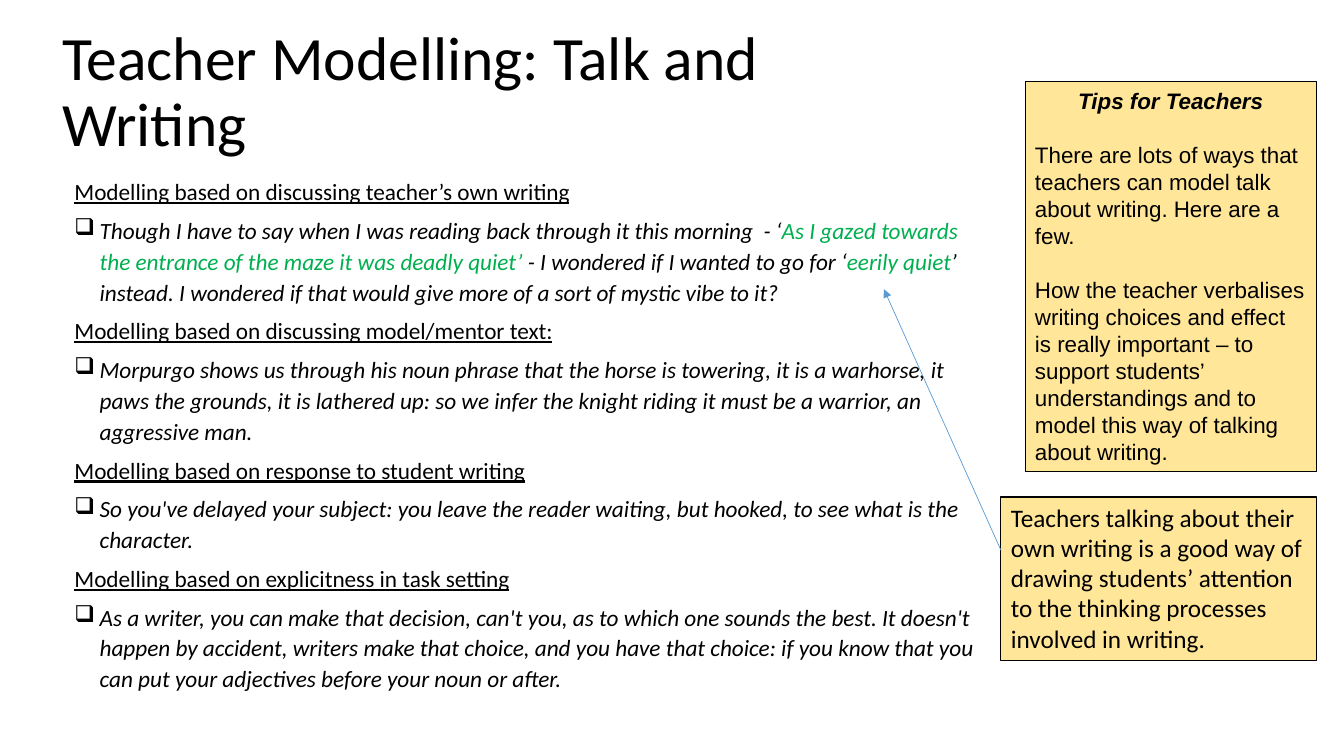
"""Build the slide on teacher modelling through talk and writing."""
from lxml import etree
from pptx import Presentation
from pptx.dml.color import RGBColor
from pptx.enum.shapes import MSO_CONNECTOR, MSO_SHAPE
from pptx.enum.text import MSO_ANCHOR, MSO_AUTO_SIZE, PP_ALIGN
from pptx.oxml.ns import qn
from pptx.util import Pt

BLACK = RGBColor(0x00, 0x00, 0x00)
GREEN = RGBColor(0x00, 0xB0, 0x50)
CREAM = RGBColor(0xFF, 0xE6, 0x99)
BLUE = RGBColor(0x5B, 0x9B, 0xD5)
LEFT, CENTER = PP_ALIGN.LEFT, PP_ALIGN.CENTER
TOP, MIDDLE = MSO_ANCHOR.TOP, MSO_ANCHOR.MIDDLE
GROW = MSO_AUTO_SIZE.SHAPE_TO_FIT_TEXT
RECT, STRAIGHT = MSO_SHAPE.RECTANGLE, MSO_CONNECTOR.STRAIGHT

TITLE = "Teacher Modelling: Talk and Writing"
MODELS = [
    ("Modelling based on discussing teacher’s own writing", [
        ("Though I have to say when I was reading back through it this morning  - ‘", BLACK),
        ("As I gazed towards the entrance of the maze it was deadly quiet’", GREEN),
        (" - I wondered if I wanted to go for ‘", BLACK),
        ("eerily quiet", GREEN),
        ("’ instead. I wondered if that would give more of a sort of mystic vibe to it?", BLACK)]),
    ("Modelling based on discussing model/mentor text:", [
        ("Morpurgo shows us through his noun phrase that the horse is towering, it is a "
         "warhorse, it paws the grounds, it is lathered up: so we infer the knight riding "
         "it must be a warrior, an aggressive man.", BLACK)]),
    ("Modelling based on response to student writing", [
        ("So you've delayed your subject: you leave the reader waiting, but hooked, to see "
         "what is the character.", BLACK)]),
    ("Modelling based on explicitness in task setting", [
        ("As a writer, you can make that decision, can't you, as to which one sounds the "
         "best. It doesn't happen by accident, writers make that choice, and you have that "
         "choice: if you know that you can put your adjectives before your noun or after.",
         BLACK)]),
]
TIPS = [
    "There are lots of ways that teachers can model talk about writing. Here are a few.",
    "How the teacher verbalises writing choices and effect is really important – to "
    "support students’ understandings and to model this way of talking about writing.",
]
NOTE = ("Teachers talking about their own writing is a good way of drawing students’ "
        "attention to the thinking processes involved in writing.")


def add_para(frame, runs, size, face="Calibri", bullet=None):
    """Add a paragraph of (text, colour) runs, filling the empty first one."""
    para = frame.paragraphs[0]
    if para.runs:
        para = frame.add_paragraph()
    para.alignment = LEFT
    if bullet:
        props = para._p.get_or_add_pPr()
        props.set("marL", str(Pt(18)))
        props.set("indent", str(Pt(-18)))
        etree.SubElement(props, qn("a:buChar")).set("char", bullet)
    para.font.size, para.font.name = Pt(size), face
    for text, color in runs:
        run = para.add_run()
        run.text = text
        run.font.color.rgb = color
    return para


def add_box(slide, left, top, width, height, anchor=TOP):
    """Add a wrapping text box and return its frame."""
    box = slide.shapes.add_textbox(Pt(left), Pt(top), Pt(width), Pt(height))
    frame = box.text_frame
    frame.word_wrap, frame.vertical_anchor = True, anchor
    return frame


def add_card(slide, left, top, width, height):
    """Add a cream card and return its frame."""
    card = slide.shapes.add_shape(RECT, Pt(left), Pt(top), Pt(width), Pt(height))
    card.shadow.inherit = False
    card.fill.solid()
    card.fill.fore_color.rgb = CREAM
    card.line.color.rgb = BLACK
    card.line.width = Pt(0.75)
    frame = card.text_frame
    frame.word_wrap, frame.vertical_anchor = True, TOP
    frame.auto_size = GROW
    return frame


def add_arrow(slide, *ends):
    """Add a thin blue arrow from the first point to the second."""
    arrow = slide.shapes.add_connector(STRAIGHT, *map(Pt, ends))
    arrow.line.color.rgb = BLUE
    arrow.line.width = Pt(0.5)
    etree.SubElement(arrow.line._get_or_add_ln(), qn("a:tailEnd")).set("type", "triangle")
    etree.SubElement(arrow._element.spPr, qn("a:effectLst"))


def add_models(slide):
    """Add each kind of modelling with its example."""
    frame = add_box(slide, 46.1, 121, 668.9, 403.9)
    for head, runs in MODELS:
        add_para(frame, [(head, BLACK)], 16.6).font.underline = True
        add_para(frame, runs, 16.6, bullet="❑").font.italic = True
    for para in frame.paragraphs:
        para.line_spacing, para.space_after = Pt(22.1), Pt(5.5)


def add_tips(slide):
    """Add the card of tips."""
    frame = add_card(slide, 732.2, 58.3, 208.1, 278.6)
    head = add_para(frame, [("Tips for Teachers", BLACK)], 16, "Arial")
    head.alignment = CENTER
    head.font.bold = head.font.italic = True
    for tip in TIPS:
        add_para(frame, [(tip, BLACK)], 16, "Arial").space_before = Pt(19.3)
    for para in frame.paragraphs:
        para.line_spacing = Pt(19.3)


def main():
    """Build and save the slide."""
    deck = Presentation()
    deck.slide_width, deck.slide_height = Pt(960), Pt(540)
    slide = deck.slides.add_slide(deck.slide_layouts[6])
    frame = add_box(slide, 37.4, 13, 648, 108, MIDDLE)
    add_para(frame, [(TITLE, BLACK)], 44).line_spacing = 0.9
    add_models(slide)
    add_tips(slide)
    add_para(add_card(slide, 715, 355, 225.4, 116.6), [(NOTE, BLACK)], 18)
    add_arrow(slide, 715, 393.1, 631.4, 206.6)
    deck.save("out.pptx")


if __name__ == "__main__":
    main()
